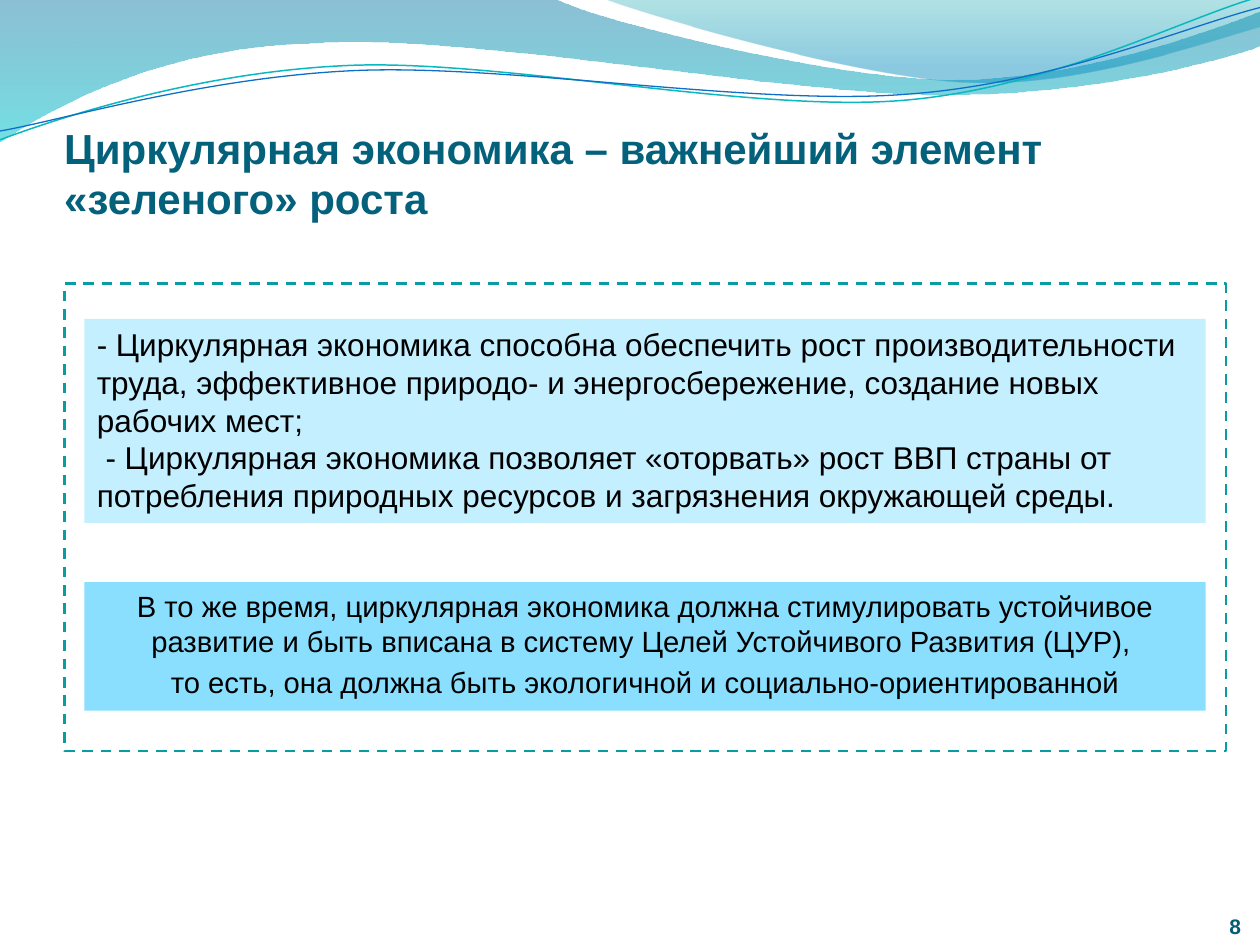
import pptx
import pptx.dml.color
import pptx.enum.dml
import pptx.enum.shapes
import pptx.enum.text
import pptx.oxml
import pptx.oxml.ns
import pptx.util

Inches = pptx.util.Inches
Pt = pptx.util.Pt
ALIGN = pptx.enum.text.PP_ALIGN
ANCHOR = pptx.enum.text.MSO_ANCHOR

BROAD_WAVE = [
    (0, 0), (4.4, -0.01),
    (4.76, 0.17, 6.64, 0.63, 7.58, 0.63), (8.53, 0.63, 9.58, 0.26, 10, 0.09),
    (10.01, 0.36),
    (9.83, 0.44, 8.7, 0.76, 7.46, 0.75), (6.22, 0.75, 3.82, 0.28, 2.57, 0.34),
    (1.29, 0.36, 0.46, 0.83, -0.01, 1.13),
]
RIGHT_WAVE = [
    (4.79, -0.01),
    (5.09, 0.11, 6.82, 0.62, 7.69, 0.65), (8.56, 0.69, 9.61, 0.32, 10, 0.21),
    (10, 0),
]
TEAL_LINE = [
    (0, 1.11), (0.48, 0.93, 1.58, 0.57, 2.77, 0.52),
    (3.95, 0.47, 5.93, 0.89, 7.13, 0.8), (8.33, 0.71, 9.38, 0.15, 9.98, -0.02),
]
BLUE_LINE = [
    (0, 1.04), (0.47, 0.96, 1.64, 0.61, 2.83, 0.56),
    (4.03, 0.51, 5.97, 0.84, 7.17, 0.75), (8.36, 0.67, 9.41, 0.21, 10, 0.06),
]
BENEFITS = [
    "- Циркулярная экономика способна обеспечить рост производительности труда, "
    "эффективное природо- и энергосбережение, создание новых рабочих мест;",
    " - Циркулярная экономика позволяет «оторвать» рост ВВП страны от потребления "
    "природных ресурсов и загрязнения окружающей среды.",
]
CONDITIONS = [
    "В то же время, циркулярная экономика должна стимулировать устойчивое развитие "
    "и быть вписана в систему Целей Устойчивого Развития (ЦУР), ",
    "то есть, она должна быть экологичной и социально-ориентированной",
]


def colour(code):
    """Turn a hex string into a colour."""
    return pptx.dml.color.RGBColor.from_string(code)


def bend(outline, segments):
    """Turn the straight steps of an outline into its cubic curves."""
    steps = list(outline.element.spPr.iter(pptx.oxml.ns.qn("a:lnTo")))
    for step, segment in zip(steps, segments[1:]):
        if len(segment) == 2:
            continue
        points = "".join(
            f'<a:pt x="{Inches(x) - outline.left}" y="{Inches(y) - outline.top}"/>'
            for x, y in zip(segment[::2], segment[1::2]))
        curve = pptx.oxml.parse_xml(
            f'<a:cubicBezTo {pptx.oxml.ns.nsdecls("a")}>{points}</a:cubicBezTo>')
        step.getparent().replace(step, curve)


def add_outline(page, segments, close):
    """Add a curved freeform without a shadow."""
    points = [(Inches(segment[-2]), Inches(segment[-1])) for segment in segments]
    builder = page.shapes.build_freeform(*points[0])
    builder.add_line_segments(points[1:], close=close)
    outline = builder.convert_to_shape()
    outline.shadow.inherit = False
    bend(outline, segments)
    return outline


def add_wave(page, segments, stops):
    """Add a closed wave with a translucent vertical gradient."""
    wave = add_outline(page, segments, True)
    wave.line.fill.background()
    wave.fill.gradient()
    wave.fill.gradient_angle = 270
    for stop, (position, code, _) in zip(wave.fill.gradient_stops, stops):
        stop.position = position
        stop.color.rgb = colour(code)
    codes = wave.element.spPr.iter(pptx.oxml.ns.qn("a:srgbClr"))
    for element, (_, _, opacity) in zip(codes, stops):
        element.append(pptx.oxml.parse_xml(
            f'<a:alpha {pptx.oxml.ns.nsdecls("a")} val="{opacity * 1000}"/>'))


def add_wave_line(page, segments, code, width):
    """Add an open curved line."""
    curve = add_outline(page, segments, False)
    curve.fill.background()
    curve.line.color.rgb = colour(code)
    curve.line.width = Pt(width)


def write(box, texts, size, code, bold=False, align=ALIGN.LEFT, before=0):
    """Write and format the paragraphs of a box."""
    frame = box.text_frame
    frame.word_wrap = True
    frame.text = "\n".join(texts)
    for para in frame.paragraphs:
        para.alignment = align
        para.space_before = Pt(before)
        for span in para.runs:
            span.font.name = "Arial"
            span.font.size = Pt(size)
            span.font.bold = bold
            span.font.color.rgb = colour(code)


def set_frame(box, anchor, top=0):
    """Anchor the text and remove the side margins."""
    frame = box.text_frame
    frame.vertical_anchor = anchor
    frame.margin_left = frame.margin_right = frame.margin_bottom = 0
    frame.margin_top = Inches(top)


def add_rectangle(page, left, top, width, height):
    """Add a rectangle without a shadow."""
    box = page.shapes.add_shape(
        pptx.enum.shapes.MSO_SHAPE.RECTANGLE,
        Inches(left), Inches(top), Inches(width), Inches(height))
    box.shadow.inherit = False
    return box


def add_panel(page, top, height, fill, texts, size, **style):
    """Add a filled text panel."""
    panel = add_rectangle(page, 0.67, top, 8.9, height)
    panel.fill.solid()
    panel.fill.fore_color.rgb = colour(fill)
    panel.line.fill.background()
    panel.text_frame.vertical_anchor = ANCHOR.TOP
    write(panel, texts, size, "000000", **style)


def add_dashed_frame(page):
    """Add the dashed frame around the panels."""
    border = add_rectangle(page, 0.51, 2.25, 9.22, 3.71)
    border.fill.background()
    border.line.color.rgb = colour("089CA3")
    border.line.width = Pt(1.5)
    border.line.dash_style = pptx.enum.dml.MSO_LINE.DASH


def place_title(page, text):
    """Move, fill and format the title above the waves."""
    title = page.shapes.title
    title.left, title.top = Inches(0.51), Inches(0.52)
    title.width, title.height = Inches(9), Inches(1.25)
    write(title, [text], 24, "04617B", bold=True)
    set_frame(title, ANCHOR.BOTTOM, top=0.05)
    title.text_frame.auto_size = pptx.enum.text.MSO_AUTO_SIZE.NONE
    page.shapes.element.append(title.element)


def add_page_number(page, number):
    """Add the page number in the lower right corner."""
    box = page.shapes.add_textbox(Inches(9.02), Inches(7.05), Inches(0.83), Inches(0.4))
    write(box, [number], 12, "045D75", bold=True, align=ALIGN.RIGHT)
    set_frame(box, ANCHOR.BOTTOM)


def main():
    """Build the slide and save it."""
    deck = pptx.Presentation()
    deck.slide_width, deck.slide_height = Inches(10), Inches(7.5)
    page = deck.slides.add_slide(deck.slide_layouts[5])
    add_wave(page, BROAD_WAVE, [(0, "0074A1", 45), (1, "00C6CF", 55)])
    add_wave(page, RIGHT_WAVE, [(0, "00A1A9", 30), (0.8, "008BBF", 45)])
    add_wave_line(page, TEAL_LINE, "0AB8BF", 0.85)
    add_wave_line(page, BLUE_LINE, "0F6FC6", 0.75)
    place_title(page, "Циркулярная экономика – важнейший элемент «зеленого» роста")
    add_panel(page, 4.62, 1.02, "8ADFFF", CONDITIONS, 16.7, align=ALIGN.CENTER, before=3.3)
    add_panel(page, 2.53, 1.62, "C4EFFF", BENEFITS, 18)
    add_dashed_frame(page)
    add_page_number(page, "8")
    deck.save("out.pptx")


if __name__ == "__main__":
    main()
